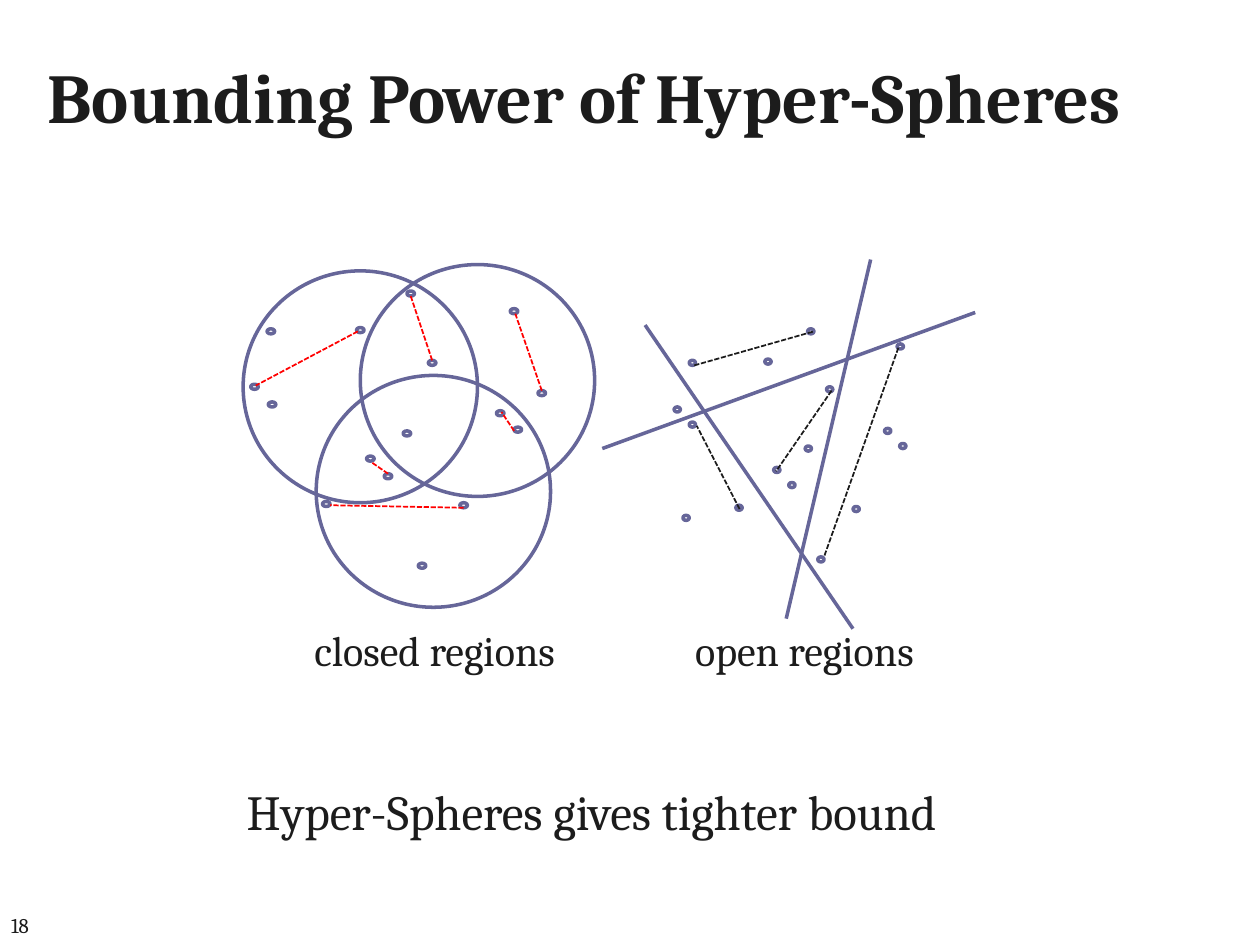
from pptx import Presentation
from pptx.dml.color import RGBColor
from pptx.enum.dml import MSO_LINE
from pptx.enum.shapes import MSO_CONNECTOR as Connector, MSO_SHAPE as Shape
from pptx.enum.text import MSO_ANCHOR as Anchor, PP_ALIGN as Align
from pptx.oxml.ns import qn
from pptx.util import Inches, Pt

INK = RGBColor(0x1C, 0x1C, 0x1C)
VIOLET = RGBColor(0x66, 0x66, 0x99)
RED = RGBColor(0xFF, 0x00, 0x00)
COLUMNS, ROWS = 100, 75

CIRCLE = (18.6, 18.4)
CIRCLES = [(28.6, 21), (19.3, 21.5), (25.1, 29.8)]
CLOSED_DOT = (0.6, 0.4)
CLOSED_POINTS = [
    (21.2, 26.1), (19.9, 30.5), (21.3, 31.9), (28.3, 26), (32.3, 23.1), (29.1, 36.2),
    (42.7, 31), (33.2, 44.7), (36.5, 39.9), (34, 28.6), (39.4, 32.6), (40.8, 33.9),
    (30.5, 37.6), (32, 34.2), (40.5, 24.5), (25.6, 39.8),
]
CLOSED_PAIRS = [
    ((28.4, 26.3), (20.3, 30.6)), ((34.3, 28.6), (32.6, 23.5)),
    ((43, 31), (40.9, 24.9)), ((40.8, 34.2), (39.8, 32.7)),
    ((36.8, 40.3), (26.2, 40.1)), ((30.8, 37.6), (29.5, 36.7)),
]

BOUNDARIES = [
    ((47.8, 35.6), (77.4, 24.8)), ((69.1, 20.6), (62.4, 49.1)), ((67.7, 49.9), (51.2, 25.8)),
]
OPEN_DOT = (0.5, 0.4)
OPEN_POINTS = [
    (54.7, 28.6), (53.5, 32.3), (54.7, 33.5), (60.7, 28.5), (64.1, 26.1), (61.4, 37.1),
    (54.2, 40.9), (64.9, 44.2), (67.7, 40.2), (65.6, 30.7), (70.2, 34), (71.4, 35.2),
    (62.6, 38.3), (63.9, 35.4), (71.2, 27.3), (58.4, 40.1),
]
OPEN_PAIRS = [
    ((66, 31), (61.6, 37.4)), ((58.7, 40.4), (55.3, 33.8)),
    ((55.1, 29), (64.6, 26.3)), ((71.3, 27.6), (65.4, 44.2)),
]


class Board:
    """Draws on one slide in grid columns and rows with a shared style."""

    font = "Cambria"

    def __init__(self, deck):
        self.slide = deck.slides.add_slide(deck.slide_layouts[6])
        self.column = deck.slide_width / COLUMNS
        self.row = deck.slide_height / ROWS
        self.start_group()

    def start_group(self):
        self.layer = self.slide.shapes

    def group(self):
        self.layer = self.slide.shapes.add_group_shape().shapes

    def place(self, *pairs):
        return [round(n * unit) for pair in pairs for n, unit in zip(pair, (self.column, self.row))]

    def text(self, words, corner, size, points, align=Align.LEFT, anchor=Anchor.TOP, bold=False):
        frame = self.slide.shapes.add_textbox(*self.place(corner, size)).text_frame
        frame.word_wrap = True
        frame.vertical_anchor = anchor
        frame.text = words
        paragraph = frame.paragraphs[0]
        paragraph.alignment = align
        font = paragraph.runs[0].font
        font.name, font.size, font.bold = self.font, Pt(points), bold
        font.color.rgb = INK

    def ring(self, corner, size):
        ring = self.layer.add_shape(Shape.OVAL, *self.place(corner, size))
        ring.shadow.inherit = False
        ring.fill.background()
        ring.line.color.rgb = VIOLET
        ring.line.width = Pt(2)

    def line(self, start, end, color=VIOLET, points=2, dash=None):
        line = self.layer.add_connector(Connector.STRAIGHT, *self.place(start, end))
        line.line.color.rgb = color
        line.line.width = Pt(points)
        line.line.dash_style = dash
        properties = line._element.spPr
        properties.append(properties.makeelement(qn("a:effectLst"), {}))

    def links(self, pairs, color):
        for start, end in pairs:
            self.line(start, end, color, 1, MSO_LINE.SQUARE_DOT)

    def rings(self, corners, size):
        for corner in corners:
            self.ring(corner, size)


def main():
    deck = Presentation()
    deck.slide_width, deck.slide_height = Inches(10), Inches(7.5)
    board = Board(deck)

    board.text("Bounding Power of Hyper-Spheres", (2.8, 1.3), (96.1, 12.5), 40,
               anchor=Anchor.MIDDLE, bold=True)
    board.text("18", (-0.1, 71.4), (23.3, 4), 12, anchor=Anchor.MIDDLE)

    board.group()
    board.rings(CLOSED_POINTS, CLOSED_DOT)
    board.rings(CIRCLES, CIRCLE)
    board.links(CLOSED_PAIRS, RED)

    board.group()
    board.rings(OPEN_POINTS, OPEN_DOT)
    for start, end in BOUNDARIES:
        board.line(start, end)
    board.links(OPEN_PAIRS, INK)

    board.text("open regions", (52, 49.1), (23.7, 5), 24, Align.CENTER)
    board.text("closed regions", (20.5, 49.1), (28, 5), 24, Align.CENTER)
    board.text("Hyper-Spheres gives tighter bound", (18.6, 61.5), (65.2, 5.7), 28, Align.JUSTIFY)

    deck.save("out.pptx")


if __name__ == "__main__":
    main()
